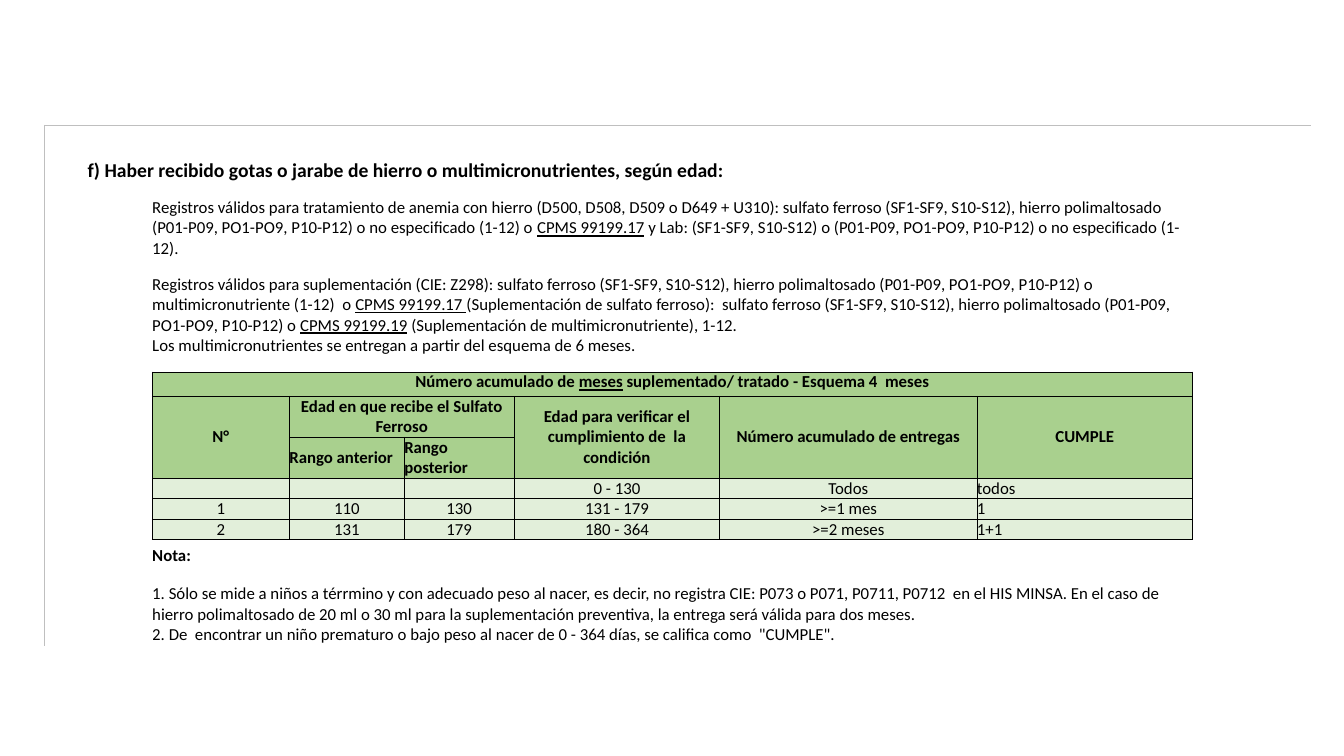
from dataclasses import dataclass

from lxml import etree
from pptx import Presentation
from pptx.dml.color import RGBColor
from pptx.enum.shapes import MSO_CONNECTOR
from pptx.enum.text import MSO_ANCHOR, MSO_AUTO_SIZE, PP_ALIGN
from pptx.oxml.ns import qn
from pptx.util import Emu, Pt

LEFT, CENTER = PP_ALIGN.LEFT, PP_ALIGN.CENTER
TOP, MIDDLE = MSO_ANCHOR.TOP, MSO_ANCHOR.MIDDLE
STRAIGHT = MSO_CONNECTOR.STRAIGHT
GROW = MSO_AUTO_SIZE.SHAPE_TO_FIT_TEXT
EMU_PER_PX = 9144


@dataclass(frozen=True)
class Theme:
    """Colours, font and type sizes of the slide."""
    font: str = "Calibri"
    title: int = 14
    body: int = 12
    empty: int = 10
    line: float = 0.5
    ink: str = "000000"
    rule: str = "BFBFBF"
    paper: str = "FFFFFF"
    header: str = "A9D08E"
    row: str = "E2EFDA"


THEME = Theme()

TITLE = "f) Haber recibido gotas o jarabe de hierro o multimicronutrientes, según edad:"
TREATMENT = (
    "Registros válidos para tratamiento de anemia con hierro (D500, D508, D509 o D649 + U310): "
    "sulfato ferroso (SF1-SF9, S10-S12), hierro polimaltosado (P01-P09, PO1-PO9, P10-P12) o no "
    "especificado (1-12) o _CPMS 99199.17_ y Lab: (SF1-SF9, S10-S12) o (P01-P09, PO1-PO9, "
    "P10-P12) o no especificado (1-12)."
)
SUPPLEMENT = (
    "Registros válidos para suplementación (CIE: Z298): sulfato ferroso (SF1-SF9, S10-S12), "
    "hierro polimaltosado (P01-P09, PO1-PO9, P10-P12) o multimicronutriente (1-12)  o "
    "_CPMS 99199.17 _(Suplementación de sulfato ferroso):  sulfato ferroso (SF1-SF9, S10-S12), "
    "hierro polimaltosado (P01-P09, PO1-PO9, P10-P12) o _CPMS 99199.19_ (Suplementación de "
    "multimicronutriente), 1-12.\n"
    "Los multimicronutrientes se entregan a partir del esquema de 6 meses."
)
NOTES = (
    "1. Sólo se mide a niños a térrmino y con adecuado peso al nacer, es decir, no registra CIE: "
    "P073 o P071, P0711, P0712  en el HIS MINSA. En el caso de  hierro polimaltosado de 20 ml o "
    "30 ml para la suplementación preventiva, la entrega será válida para dos meses.\n"
    "2. De  encontrar un niño prematuro o bajo peso al nacer de 0 - 364 días, se califica como  "
    '"CUMPLE".'
)
SCHEDULE = [
    ["Número acumulado de _meses_ suplementado/ tratado - Esquema 4  meses", "", "", "", "", ""],
    ["N°", "Edad en que recibe el Sulfato Ferroso", "",
     "Edad para verificar el cumplimiento de  la condición",
     "Número acumulado de entregas", "CUMPLE"],
    ["", "Rango anterior", "Rango posterior", "", "", ""],
    ["", "", "", "0 - 130", "Todos", "todos"],
    ["1", "110", "130", "131 - 179", ">=1 mes", "1"],
    ["2", "131", "179", "180 - 364", ">=2 meses", "1+1"],
]
HEADER_ROWS = 3


def px(n):
    """Turn px into EMU."""
    return Emu(n * EMU_PER_PX)


def rgb(value):
    """Turn a hex string into a colour."""
    return RGBColor.from_string(value)


def write_text(tf, text, size=THEME.body, bold=False, align=LEFT):
    """Write one paragraph per line, underlining what stands between underscores."""
    fmt = {"name": THEME.font, "size": Pt(size), "bold": bold}
    for i, line in enumerate(text.split("\n")):
        p = tf.add_paragraph() if i else tf.paragraphs[0]
        p.alignment = align
        for j, part in enumerate(line.split("_")):
            r = p.add_run()
            r.text = part
            for name, value in fmt.items():
                setattr(r.font, name, value)
            r.font.underline = j % 2 == 1
            r.font.color.rgb = rgb(THEME.ink)


def add_rule(s, x1, y1, x2, y2):
    """Draw a thin grey line without shadow."""
    c = s.shapes.add_connector(STRAIGHT, px(x1), px(y1), px(x2), px(y2))
    c.line.color.rgb = rgb(THEME.rule)
    c.line.width = Pt(THEME.line)
    etree.SubElement(c._element.spPr, qn("a:effectLst"))


def add_title(s, text, x, y, w, h):
    """Add the bold heading."""
    sp = s.shapes.add_textbox(px(x), px(y), px(w), px(h))
    tf = sp.text_frame
    tf.word_wrap = True
    tf.auto_size = GROW
    write_text(tf, text, THEME.title, bold=True)


def add_grid(s, x, y, cols, rows):
    """Add an unstyled table with the given column widths and row heights."""
    frame = s.shapes.add_table(len(rows), len(cols), px(x), px(y), px(sum(cols)), px(sum(rows)))
    table = frame.table
    table.first_row = table.horz_banding = False
    for col, w in zip(table.columns, cols):
        col.width = px(w)
    for row, h in zip(table.rows, rows):
        row.height = px(h)
    return table


def add_borders(cell):
    """Give a cell thin lines on all four sides."""
    tc_pr = cell._tc.get_or_add_tcPr()
    for side in ("a:lnL", "a:lnR", "a:lnT", "a:lnB"):
        ln = etree.SubElement(tc_pr, qn(side), w=str(Pt(THEME.line)))
        fill = etree.SubElement(ln, qn("a:solidFill"))
        etree.SubElement(fill, qn("a:srgbClr"), val=THEME.ink)


def fill_cell(cell, text, color, bold=False, align=LEFT, anchor=TOP):
    """Set fill, margins and text of a cell."""
    fmt = {"margin_left": 0, "margin_right": 0, "margin_top": 0, "margin_bottom": 0,
           "vertical_anchor": anchor}
    for name, value in fmt.items():
        setattr(cell, name, value)
    cell.fill.solid()
    cell.fill.fore_color.rgb = rgb(color)
    if text:
        write_text(cell.text_frame, text, bold=bold, align=align)
    else:
        p = cell.text_frame.paragraphs[0]
        etree.SubElement(p._p, qn("a:endParaRPr"), sz=str(THEME.empty * 100))


def add_text_table(s, x, y, cols, rows, texts, merged, bold_rows=()):
    """Add a plain table with text in its first column and some rows merged."""
    table = add_grid(s, x, y, cols, rows)
    last = len(cols) - 1
    for i, text in enumerate(texts):
        for j in range(len(cols)):
            fill_cell(table.cell(i, j), "" if j else text, THEME.paper, bold=i in bold_rows)
        if i in merged:
            table.cell(i, 0).merge(table.cell(i, last))


def add_schedule(s, x, y, cols, rows):
    """Add the bordered table of deliveries by age."""
    table = add_grid(s, x, y, cols, rows)
    last = len(cols) - 1
    for i, texts in enumerate(SCHEDULE):
        head = i < HEADER_ROWS
        for j, text in enumerate(texts):
            cell = table.cell(i, j)
            flush = i == HEADER_ROWS - 1 or (not head and j == last)
            add_borders(cell)
            fill_cell(cell, text, THEME.header if head else THEME.row, bold=head,
                      align=LEFT if flush else CENTER, anchor=MIDDLE if i else TOP)
    table.cell(0, 0).merge(table.cell(0, last))
    table.cell(1, 1).merge(table.cell(1, 2))
    for j in (0, 3, 4, 5):
        table.cell(1, j).merge(table.cell(2, j))


def main():
    """Build the slide and save it."""
    prs = Presentation()
    prs.slide_width, prs.slide_height = px(1333), px(750)
    s = prs.slides.add_slide(prs.slide_layouts[6])
    add_rule(s, 44, 124, 44, 641)
    add_rule(s, 44, 124, 1300, 124)
    add_text_table(s, 151, 178, [676] + [89] * 4, [18, 76, 79],
                   ["", TREATMENT, SUPPLEMENT], merged=(1, 2))
    add_schedule(s, 151, 369, [136, 114, 109, 204, 255, 214], [24, 38, 39, 20, 20, 20])
    add_text_table(s, 151, 541, [135, 114, 109, 102, 102, 197, 135, 135], [38, 68],
                   ["Nota:", NOTES], merged=(1,), bold_rows=(0,))
    add_title(s, TITLE, 77, 152, 1120, 34)
    prs.save("out.pptx")


if __name__ == "__main__":
    main()
